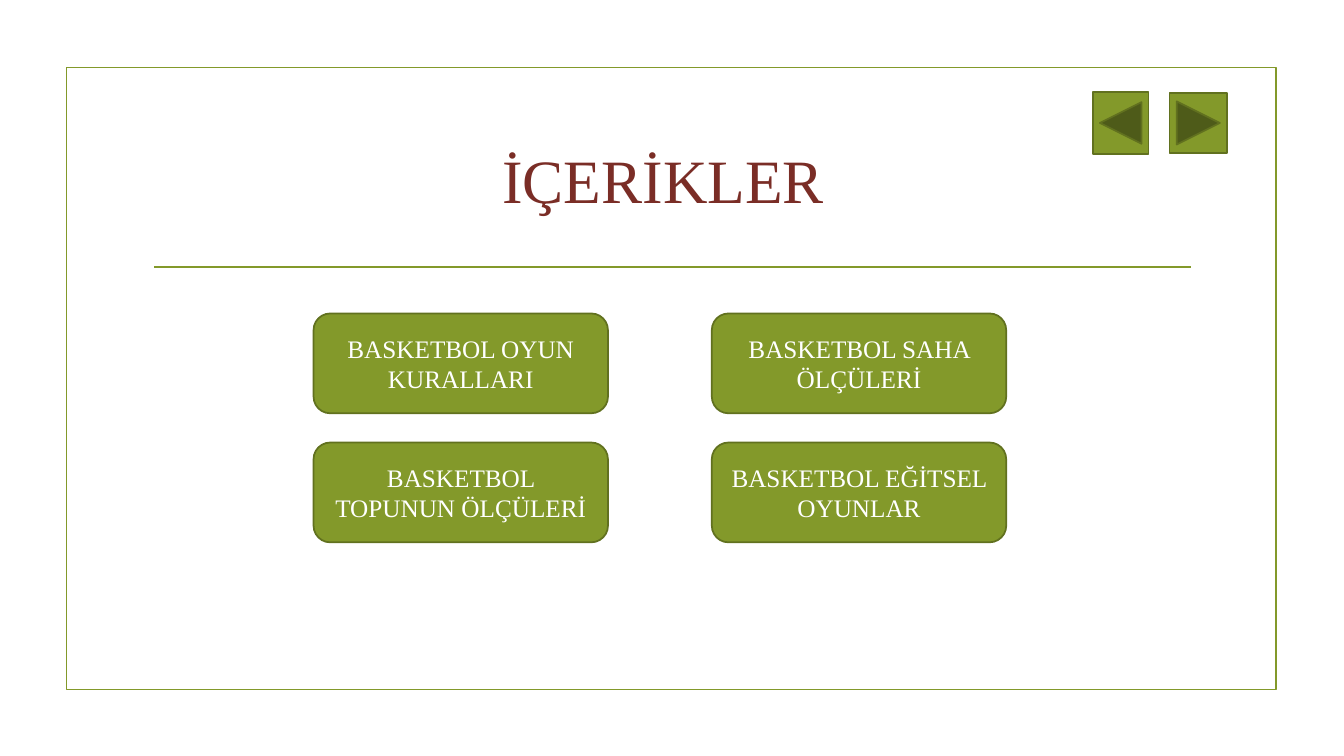
from dataclasses import dataclass

from lxml import etree
from pptx import Presentation
from pptx import util as u
from pptx.dml.color import RGBColor
from pptx.enum import shapes, text
from pptx.oxml import ns

PX = 9144  # EMU per px, 100 px to the inch


@dataclass(frozen=True)
class Theme:
    paper: RGBColor = RGBColor(0xFF, 0xFF, 0xFF)
    olive: RGBColor = RGBColor(0x83, 0x99, 0x2A)
    dark_olive: RGBColor = RGBColor(0x61, 0x71, 0x1F)
    maroon: RGBColor = RGBColor(0x7A, 0x2D, 0x26)
    font: str = "Times New Roman"
    title_size: int = 44
    label_size: int = 18
    line_width: float = 1.25


@dataclass(frozen=True)
class Box:
    left: int
    top: int
    width: int
    height: int

    def emu(self) -> tuple[int, int, int, int]:
        return self.left * PX, self.top * PX, self.width * PX, self.height * PX


@dataclass(frozen=True)
class Button:
    kind: shapes.MSO_SHAPE
    box: Box
    label: str = ""


THEME = Theme()
FRAME = Box(66, 67, 1200, 617)
TITLE = Box(368, 136, 580, 84)
RULE_LEFT, RULE_RIGHT, RULE_TOP = 153, 1181, 265

# Topic grid
TOPICS = (
    ("BASKETBOL OYUN KURALLARI", "BASKETBOL SAHA ÖLÇÜLERİ"),
    ("BASKETBOL TOPUNUN ÖLÇÜLERİ", "BASKETBOL EĞİTSEL OYUNLAR"),
)
GRID_LEFT, GRID_TOP = 311, 311
COLUMN_STEP, ROW_STEP = 395, 128
TOPIC_WIDTH, TOPIC_HEIGHT = 292, 99

NAVIGATION = [
    Button(shapes.MSO_SHAPE.ACTION_BUTTON_BACK_OR_PREVIOUS, Box(1084, 91, 55, 62)),
    Button(shapes.MSO_SHAPE.ACTION_BUTTON_FORWARD_OR_NEXT, Box(1160, 92, 57, 60)),
]


def write(frame, content: str, size: int, color: RGBColor) -> None:
    frame.word_wrap = True
    para = frame.paragraphs[0]
    para.alignment = text.PP_ALIGN.CENTER
    span = para.add_run()
    span.text = content
    span.font.name = THEME.font
    span.font.size = u.Pt(size)
    span.font.color.rgb = color


def set_line(shape, color: RGBColor) -> None:
    shape.line.color.rgb = color
    shape.line.width = u.Pt(THEME.line_width)


def add_frame(page) -> None:
    border = page.shapes.add_shape(shapes.MSO_SHAPE.RECTANGLE, *FRAME.emu())
    border.shadow.inherit = False
    border.fill.background()
    set_line(border, THEME.olive)


def add_rule(page) -> None:
    rule = page.shapes.add_connector(
        shapes.MSO_CONNECTOR.STRAIGHT,
        RULE_LEFT * PX, RULE_TOP * PX, RULE_RIGHT * PX, RULE_TOP * PX,
    )
    set_line(rule, THEME.olive)
    etree.SubElement(rule._element.spPr, ns.qn("a:effectLst"))


def add_title(page) -> None:
    title = page.shapes.title
    title.left, title.top, title.width, title.height = TITLE.emu()
    frame = title.text_frame
    frame.vertical_anchor = text.MSO_ANCHOR.TOP
    frame.auto_size = text.MSO_AUTO_SIZE.NONE
    write(frame, "İÇERİKLER", THEME.title_size, THEME.maroon)


def add_button(page, button: Button) -> None:
    shape = page.shapes.add_shape(button.kind, *button.box.emu())
    shape.shadow.inherit = False
    shape.fill.solid()
    shape.fill.fore_color.rgb = THEME.olive
    set_line(shape, THEME.dark_olive)
    if button.label:
        shape.text_frame.vertical_anchor = text.MSO_ANCHOR.MIDDLE
        write(shape.text_frame, button.label, THEME.label_size, THEME.paper)


def topic_buttons() -> list[Button]:
    return [
        Button(
            shapes.MSO_SHAPE.ROUNDED_RECTANGLE,
            Box(GRID_LEFT + column * COLUMN_STEP, GRID_TOP + row * ROW_STEP,
                TOPIC_WIDTH, TOPIC_HEIGHT),
            label,
        )
        for row, labels in enumerate(TOPICS)
        for column, label in enumerate(labels)
    ]


def main() -> None:
    deck = Presentation()
    deck.slide_width, deck.slide_height = 1333 * PX, 750 * PX
    page = deck.slides.add_slide(deck.slide_layouts.get_by_name("Title Only"))
    page.background.fill.solid()
    page.background.fill.fore_color.rgb = THEME.paper

    # Border, title and rule
    add_frame(page)
    add_rule(page)
    add_title(page)

    # Topics and page navigation
    for button in topic_buttons() + NAVIGATION:
        add_button(page, button)

    deck.save("out.pptx")


if __name__ == "__main__":
    main()
